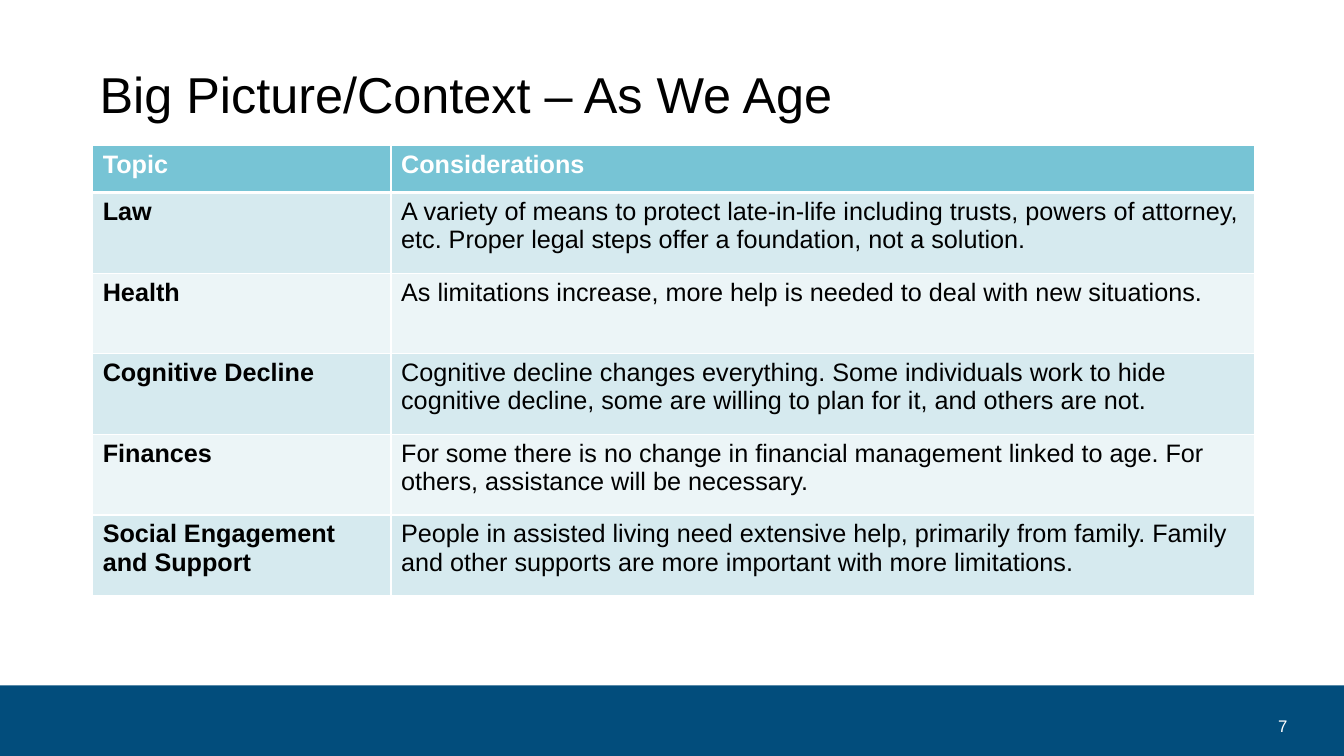
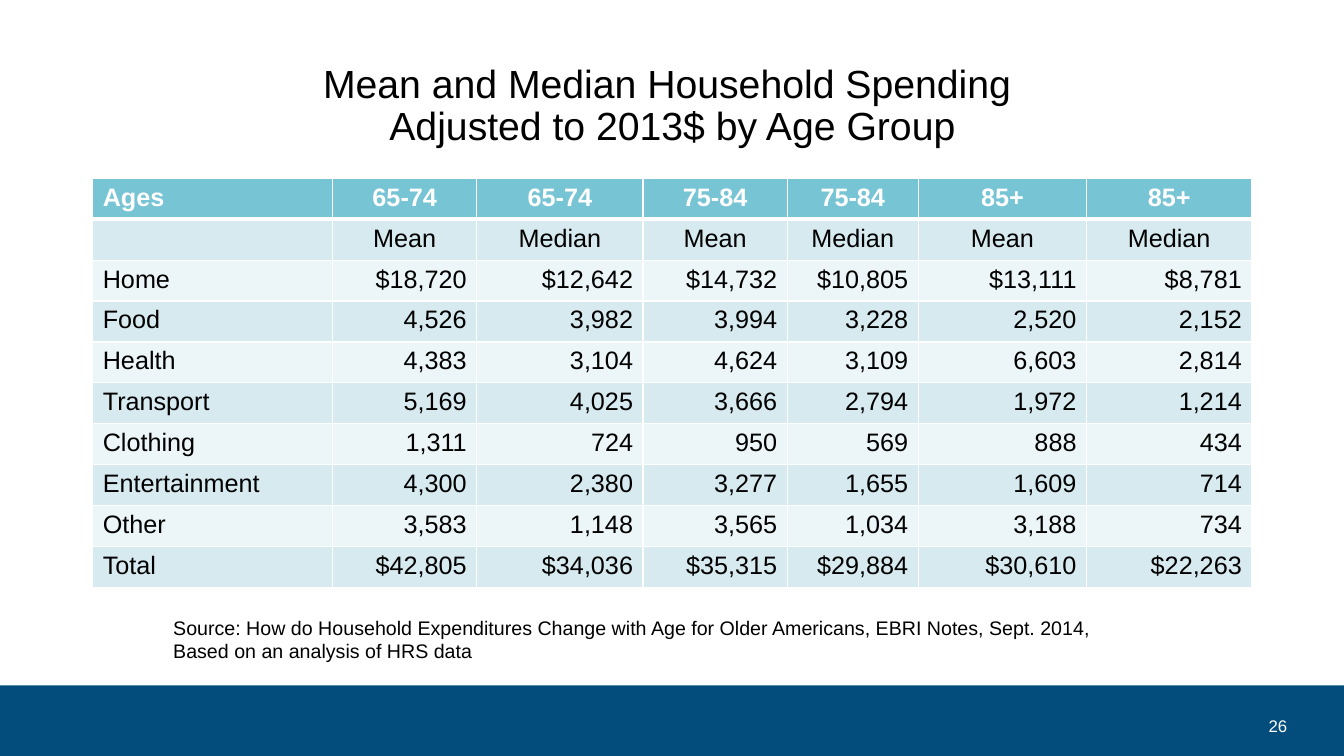
"""Build two slides on ageing: a table of topics and a table of household spending."""
from dataclasses import dataclass

from lxml import etree
from pptx import Presentation
from pptx import util as u
from pptx.dml.color import RGBColor
from pptx.enum import shapes, text
from pptx.oxml import ns


@dataclass(frozen=True)
class Theme:
    font: str = "Arial"
    ink: str = "000000"
    white: str = "FFFFFF"
    band: str = "024D7C"
    header: str = "77C4D5"
    rows: tuple = ("ECF5F7", "D6EAEF")
    title_size: int = 36
    long_title_size: int = 28
    table_size: int = 18
    source_size: int = 14
    number_size: int = 12


theme = Theme()
LEFT, CENTER, RIGHT = text.PP_ALIGN.LEFT, text.PP_ALIGN.CENTER, text.PP_ALIGN.RIGHT


def add_text(page, place, words, size, color, align=LEFT, spacing=1.0):
    box = page.shapes.add_textbox(*map(u.Pt, place))
    frame = box.text_frame
    frame.word_wrap = True
    frame.vertical_anchor = text.MSO_ANCHOR.MIDDLE
    frame.text = words
    for para in frame.paragraphs:
        para.alignment = align
        para.line_spacing = spacing
        for span in para.runs:
            span.font.name = theme.font
            span.font.size = u.Pt(size)
            span.font.color.rgb = RGBColor.from_string(color)
    return box


def add_table(page, top, widths, heights, rows, bold_labels, align_for):
    frame = page.shapes.add_table(len(rows), len(widths), u.Pt(66.24), u.Pt(top),
                                  u.Pt(sum(widths)), u.Pt(sum(heights)))
    table = frame.table
    for column, width in zip(table.columns, widths):
        column.width = u.Pt(width)
    for row, height in zip(table.rows, heights):
        row.height = u.Pt(height)
    for r, values in enumerate(rows):
        for c, value in enumerate(values):
            cell = table.cell(r, c)
            properties = cell._tc.get_or_add_tcPr()
            thick_side = {0: "lnB", 1: "lnT"}.get(r)
            for side in ("lnL", "lnR", "lnT", "lnB"):
                width = u.Pt(3 if side == thick_side else 1)
                line = etree.SubElement(properties, ns.qn("a:" + side), w=str(width))
                solid = etree.SubElement(line, ns.qn("a:solidFill"))
                etree.SubElement(solid, ns.qn("a:srgbClr"), val=theme.white)
            cell.fill.solid()
            fill = theme.rows[r % 2] if r else theme.header
            cell.fill.fore_color.rgb = RGBColor.from_string(fill)
            cell.text_frame.text = value
            para = cell.text_frame.paragraphs[0]
            para.alignment = align_for(r, c)
            para.font.size = u.Pt(theme.table_size)
            for span in para.runs:
                span.font.name = theme.font
                span.font.size = u.Pt(theme.table_size)
                span.font.bold = r == 0 or (bold_labels and c == 0)
                span.font.color.rgb = RGBColor.from_string(theme.ink if r else theme.white)


deck = Presentation()
deck.slide_width, deck.slide_height = u.Pt(960), u.Pt(540)

pages = []
for number, title, place, size, align in (
    ("7", "Big Picture/Context – As We Age",
     (64.08, 25.92, 828, 87.12), theme.title_size, LEFT),
    ("26", "Mean and Median Household Spending \vAdjusted to 2013$ by Age Group",
     (66.24, 25.92, 828, 100.8), theme.long_title_size, CENTER),
):
    page = deck.slides.add_slide(deck.slide_layouts[6])
    band = page.shapes.add_shape(shapes.MSO_SHAPE.RECTANGLE,
                                 0, u.Pt(489.6), deck.slide_width, u.Pt(50.4))
    band.shadow.inherit = False
    band.fill.solid()
    band.fill.fore_color.rgb = RGBColor.from_string(theme.band)
    band.line.fill.background()
    add_text(page, place, title, size, theme.ink, align, 0.9)
    add_text(page, (861.84, 504, 64.8, 28.8), number, theme.number_size, theme.white, RIGHT)
    pages.append(page)
context_page, spending_page = pages

topics = [
    ("Topic", "Considerations"),
    ("Law", "A variety of means to protect late-in-life including trusts, powers of attorney, "
            "etc. Proper legal steps offer a foundation, not a solution."),
    ("Health", "As limitations increase, more help is needed to deal with new situations."),
    ("Cognitive Decline", "Cognitive decline changes everything. Some individuals work to hide "
                          "cognitive decline, some are willing to plan for it, and others are not."),
    ("Finances", "For some there is no change in financial management linked to age. "
                 "For others, assistance will be necessary."),
    ("Social Engagement and Support",
     "People in assisted living need extensive help, primarily from family. "
     "Family and other supports are more important with more limitations."),
]
add_table(context_page, 103.68, (213.12, 617.04), [33.84] + [57.6] * 5, topics,
          True, lambda r, c: LEFT)

spending = [
    ("Ages", "65-74", "65-74", "75-84", "75-84", "85+", "85+"),
    ("", "Mean", "Median", "Mean", "Median", "Mean", "Median"),
    ("Home", "$18,720", "$12,642", "$14,732", "$10,805", "$13,111", "$8,781"),
    ("Food", "4,526", "3,982", "3,994", "3,228", "2,520", "2,152"),
    ("Health", "4,383", "3,104", "4,624", "3,109", "6,603", "2,814"),
    ("Transport", "5,169", "4,025", "3,666", "2,794", "1,972", "1,214"),
    ("Clothing", "1,311", "724", "950", "569", "888", "434"),
    ("Entertainment", "4,300", "2,380", "3,277", "1,655", "1,609", "714"),
    ("Other", "3,583", "1,148", "3,565", "1,034", "3,188", "734"),
    ("Total", "$42,805", "$34,036", "$35,315", "$29,884", "$30,610", "$22,263"),
]
add_table(spending_page, 127.44, (171.36, 102.96, 118.8, 102.96, 93.6, 120.24, 118.08),
          [29.2] * len(spending), spending, False,
          lambda r, c: LEFT if c == 0 else CENTER if r < 2 else RIGHT)

source = add_text(spending_page, (116.64, 436.32, 676.8, 41.04),
                  "Source: How do Household Expenditures Change with Age for Older Americans, "
                  "EBRI Notes, Sept. 2014,\nBased on an analysis of HRS data",
                  theme.source_size, theme.ink)
source.text_frame.word_wrap = False
source.text_frame.auto_size = text.MSO_AUTO_SIZE.SHAPE_TO_FIT_TEXT
source.text_frame.vertical_anchor = text.MSO_ANCHOR.TOP

deck.save("out.pptx")
